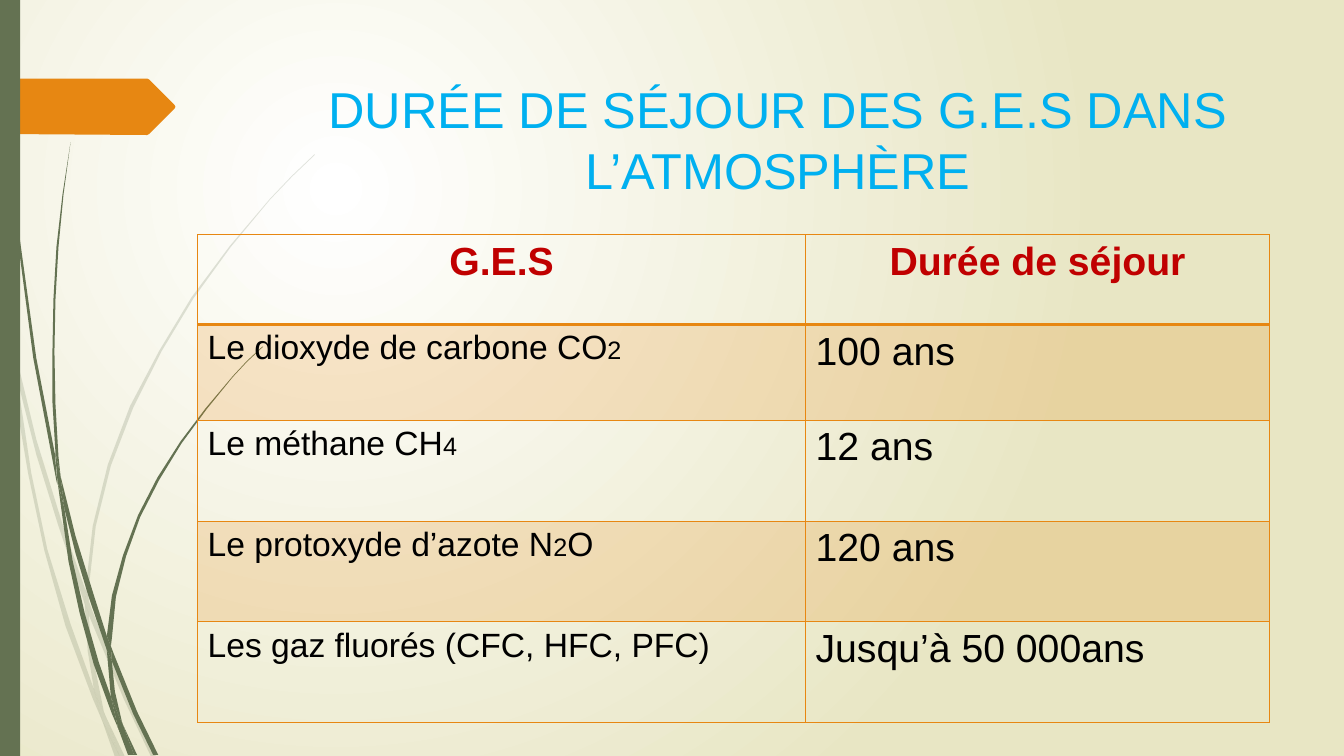
from lxml import etree
from pptx import Presentation
from pptx.dml.color import RGBColor
from pptx.enum.shapes import MSO_SHAPE
from pptx.enum.text import MSO_ANCHOR, PP_ALIGN
from pptx.oxml.ns import qn
from pptx.util import Pt

PX = 9144  # 100 px to the inch
RECT = MSO_SHAPE.RECTANGLE
MIDDLE = MSO_ANCHOR.MIDDLE
CENTER, LEFT = PP_ALIGN.CENTER, PP_ALIGN.LEFT
COLORS = {"paper": "FFFFFF", "sand": "E8E6C4", "green": "647252", "orange": "E78712",
          "title": "00B0F0", "head": "C00000", "text": "000000"}


def paint(fill, element, color, opacity=100):
    """Fill with a named colour; element is the XML node that holds the fill."""
    fill.solid()
    fill.fore_color.rgb = RGBColor.from_string(COLORS[color])
    if opacity < 100:
        clr = element.find(".//" + qn("a:solidFill") + "/" + qn("a:srgbClr"))
        etree.SubElement(clr, qn("a:alpha")).set("val", str(opacity * 1000))


def write(p, runs, color, align=LEFT, bold=False):
    """Add (text, size) runs to a paragraph."""
    p.alignment = align
    for text, size in runs:
        r = p.add_run()
        r.text = text
        for name, value in {"name": "Arial", "size": Pt(size), "bold": bold}.items():
            setattr(r.font, name, value)
        r.font.color.rgb = RGBColor.from_string(COLORS[color])


prs = Presentation()
prs.slide_width, prs.slide_height = 1333 * PX, 750 * PX
s = prs.slides.add_slide(prs.slide_layouts[6])

# Background: radial gradient centred in the upper left
bg = s.background.fill
bg.gradient()
for stop, color in zip(bg.gradient_stops, ("paper", "sand")):
    stop.color.rgb = RGBColor.from_string(COLORS[color])
grad = s.element.find(".//" + qn("a:gradFill"))
grad.remove(grad.find(qn("a:lin")))
radial = etree.SubElement(grad, qn("a:path"), path="circle")
etree.SubElement(radial, qn("a:fillToRect"), l="50000", t="50000", r="100000", b="100000")

# Grass blades and the arrow tab, as outlines in px
PALE_GRASS = [
    [(11, 350), (9, 322), (0, 282), (0, 299), (10, 344)],
    [(58, 522), (84, 599), (85, 586), (62, 520), (36, 436), (14, 345), (17, 376), (36, 451)],
    [(92, 607), (88, 596), (88, 610), (123, 694), (150, 751), (155, 751), (127, 692)],
    [(119, 751), (124, 751), (105, 711)],
    [(93, 683), (70, 619), (47, 545), (31, 469), (17, 376), (11, 350), (18, 411), (28, 470),
     (44, 546), (65, 621), (92, 693), (101, 714), (99, 707)],
    [(84, 599), (87, 646), (93, 683), (96, 692), (105, 711), (103, 706), (91, 646), (88, 610),
     (88, 608)],
    [(88, 584), (95, 522), (110, 462), (132, 405), (160, 349), (192, 296), (229, 245), (268, 198),
     (290, 175), (312, 154), (312, 153), (289, 175), (268, 197), (228, 244), (190, 295),
     (158, 348), (129, 403), (107, 461), (92, 522), (85, 584), (85, 586), (88, 596)],
    [(101, 714), (114, 751), (119, 751)],
    [(88, 608), (88, 610), (88, 596), (85, 586), (84, 599)],
    [(96, 692), (93, 683), (99, 707), (101, 714), (119, 751), (105, 711)],
]
DARK_GRASS = [
    [(7, 110), (17, 233), (33, 355), (56, 477), (57, 481), (55, 457), (55, 453), (36, 355),
     (19, 232), (8, 109), (5, 48), (4, 0), (3, 0), (4, 48)],
    [(88, 592), (106, 645), (106, 631), (93, 590), (75, 532), (60, 472), (64, 505), (75, 549)],
    [(113, 649), (110, 641), (111, 656), (132, 708), (152, 749), (157, 749), (136, 706)],
    [(110, 691), (98, 657), (84, 608), (72, 556), (64, 505), (57, 477), (68, 557), (79, 608),
     (93, 659), (111, 708), (117, 722), (116, 717)],
    [(60, 472), (58, 453), (55, 401), (54, 349), (55, 297), (58, 245), (63, 193), (70, 141),
     (62, 193), (56, 245), (53, 297), (52, 349), (52, 399), (55, 449)],
    [(133, 749), (136, 749), (122, 719)],
    [(57, 477), (64, 505), (60, 472), (55, 449), (55, 453)],
    [(111, 633), (115, 592), (125, 552), (139, 513), (158, 476), (180, 440), (205, 406), (231, 374),
     (245, 359), (261, 344), (260, 344), (245, 358), (231, 373), (204, 405), (179, 438),
     (156, 474), (137, 511), (122, 551), (111, 591), (106, 631), (110, 641)],
    [(117, 722), (127, 749), (131, 749)],
    [(106, 645), (110, 691), (116, 706), (122, 719), (121, 716), (114, 686), (111, 656), (109, 651)],
    [(106, 645), (109, 651), (111, 656), (110, 641), (106, 631)],
    [(116, 706), (110, 691), (116, 717), (117, 722), (130, 749), (133, 749), (122, 719)],
]
ARROW_TAB = [(0, 78), (146, 78), (148, 79), (173, 104), (174, 106), (173, 108), (148, 133),
             (146, 134), (0, 133)]

for outlines, color, opacity in ((PALE_GRASS, "green", 20), (DARK_GRASS, "green", 100),
                                 ([ARROW_TAB], "orange", 100)):
    shapes = s.shapes.add_group_shape().shapes if len(outlines) > 1 else s.shapes
    for outline in outlines:
        builder = shapes.build_freeform(*outline[0], scale=PX)
        builder.add_line_segments(outline[1:], close=True)
        sp = builder.convert_to_shape()
        sp.shadow.inherit = False
        sp.line.fill.background()
        paint(sp.fill, sp.element, color, opacity)

bar = s.shapes.add_shape(RECT, 0, 0, 20 * PX, 750 * PX)
bar.shadow.inherit = False
bar.line.fill.background()
paint(bar.fill, bar.element, "green")

# Title
tf = s.shapes.add_textbox(284 * PX, 68 * PX, 975 * PX, 140 * PX).text_frame
tf.word_wrap = True
tf.vertical_anchor = MIDDLE
write(tf.paragraphs[0], [("DURÉE DE SÉJOUR DES G.E.S DANS L’ATMOSPHÈRE", 36)], "title", CENTER)

# Table
ROWS = [
    ([("G.E.S", 28)], "Durée de séjour"),
    ([("Le dioxyde de carbone CO", 24), ("2", 18)], "100 ans"),
    ([("Le méthane CH", 24), ("4", 18)], "12 ans"),
    ([("Le protoxyde d’azote N", 24), ("2", 18), ("O", 24)], "120 ans"),
    ([("Les gaz fluorés (CFC, HFC, PFC)", 24)], "Jusqu’à 50 000ans"),
]
table = s.shapes.add_table(len(ROWS), 2, 196 * PX, 233 * PX, 1063 * PX, 484 * PX).table
table.first_row = table.horz_banding = False
for col, width in zip(table.columns, (603, 460)):
    col.width = width * PX
for row, height in zip(table.rows, (89, 95, 100, 100, 100)):
    row.height = height * PX

for i, (gas, duration) in enumerate(ROWS):
    for j, runs in enumerate((gas, [(duration, 28)])):
        cell = table.cell(i, j)
        tcPr = cell._tc.get_or_add_tcPr()
        if i % 2:
            paint(cell.fill, tcPr, "orange", 20)
        else:
            cell.fill.background()
        widths = {"lnL": 1, "lnR": 1, "lnT": 2 if i == 1 else 1, "lnB": 2 if i == 0 else 1}
        for k, (side, width) in enumerate(widths.items()):
            ln = etree.Element(qn("a:" + side), w=str(Pt(width)))
            solid = etree.SubElement(ln, qn("a:solidFill"))
            etree.SubElement(solid, qn("a:srgbClr"), val=COLORS["orange"])
            tcPr.insert(k, ln)
        p = cell.text_frame.paragraphs[0]
        if i == 0:
            write(p, runs, "head", CENTER, bold=True)
        else:
            write(p, runs, "text")

prs.save("out.pptx")
